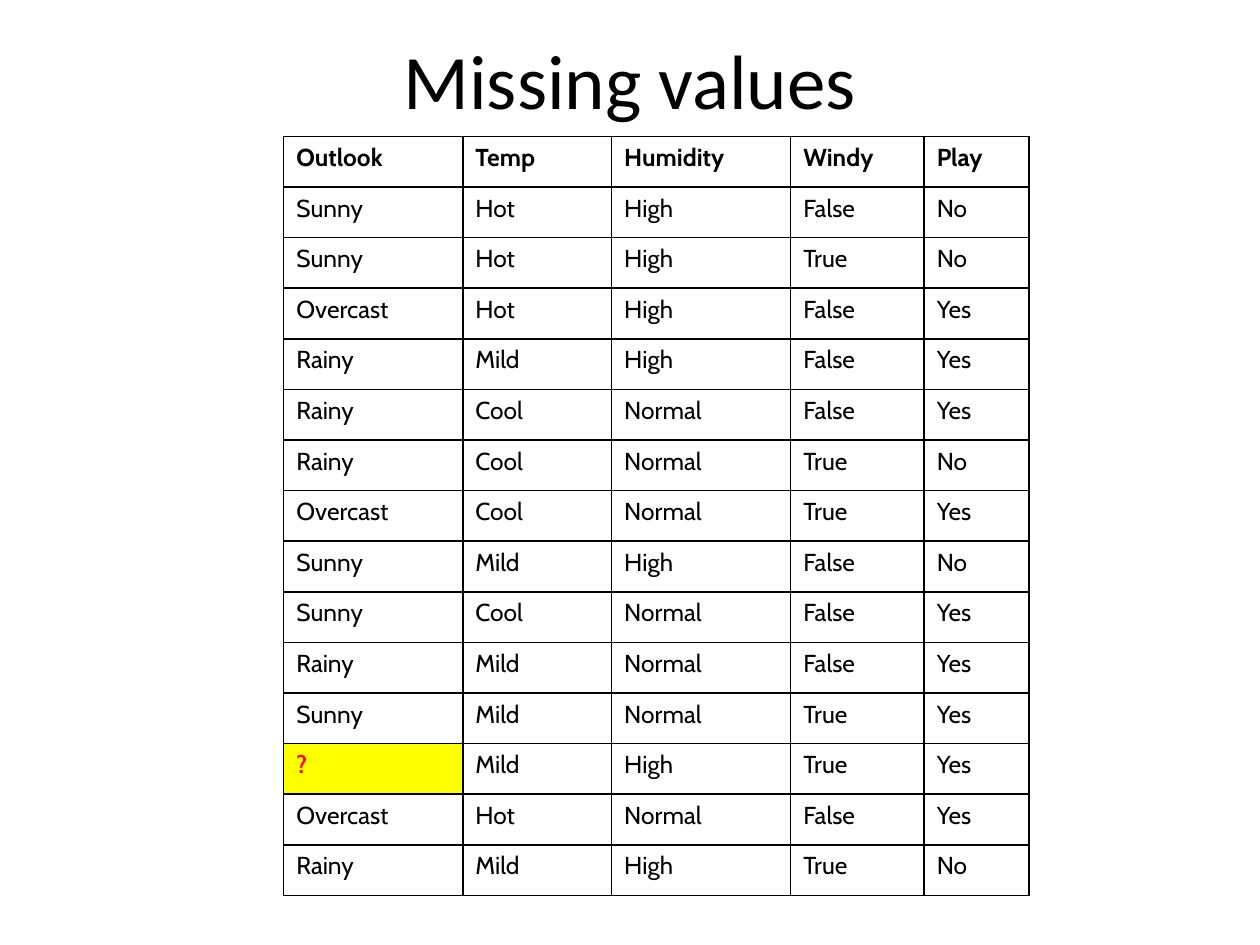
from lxml.etree import SubElement
from pptx import Presentation
from pptx.dml.color import RGBColor
from pptx.enum.text import MSO_ANCHOR, PP_ALIGN
from pptx.oxml import parse_xml
from pptx.oxml.ns import nsdecls, qn
from pptx.util import Cm, Pt

BLACK = RGBColor(0x00, 0x00, 0x00)
RED = RGBColor(0xFF, 0x00, 0x00)
YELLOW = RGBColor(0xFF, 0xFF, 0x00)

# Content
TITLE = "Missing values"
MISSING = "?"
HEADINGS = ("Outlook", "Temp", "Humidity", "Windy", "Play")
DAYS = [
    ("Sunny", "Hot", "High", "False", "No"),
    ("Sunny", "Hot", "High", "True", "No"),
    ("Overcast", "Hot", "High", "False", "Yes"),
    ("Rainy", "Mild", "High", "False", "Yes"),
    ("Rainy", "Cool", "Normal", "False", "Yes"),
    ("Rainy", "Cool", "Normal", "True", "No"),
    ("Overcast", "Cool", "Normal", "True", "Yes"),
    ("Sunny", "Mild", "High", "False", "No"),
    ("Sunny", "Cool", "Normal", "False", "Yes"),
    ("Rainy", "Mild", "Normal", "False", "Yes"),
    ("Sunny", "Mild", "Normal", "True", "Yes"),
    (MISSING, "Mild", "High", "True", "Yes"),
    ("Overcast", "Hot", "Normal", "False", "Yes"),
    ("Rainy", "Mild", "High", "True", "No"),
]
COLUMN_WIDTHS = (3.61, 3.0, 3.61, 2.69, 2.11)
ROW_HEIGHT = 1.02


def add_run(paragraph, text, font_name, size, color, bold=False):
    run = paragraph.add_run()
    run.text = text
    run.font.name = font_name
    run.font.size = Pt(size)
    run.font.bold = bold
    run.font.color.rgb = color


def add_borders(cell):
    properties = cell._tc.get_or_add_tcPr()
    for side in ("lnL", "lnR", "lnT", "lnB"):
        properties.append(parse_xml(
            f'<a:{side} {nsdecls("a")} w="{Pt(1)}"><a:solidFill>'
            f'<a:srgbClr val="{BLACK}"/></a:solidFill></a:{side}>'))


def fill_cell(cell, text, heading):
    missing = text == MISSING
    add_borders(cell)
    if missing:
        cell.fill.solid()
        cell.fill.fore_color.rgb = YELLOW
    else:
        cell.fill.background()
    paragraph = cell.text_frame.paragraphs[0]
    # Space before, as a share of the line height
    space = SubElement(paragraph._p.get_or_add_pPr(), qn("a:spcBef"))
    SubElement(space, qn("a:spcPct")).set("val", "50000")
    add_run(paragraph, text, "Cabin", 14, RED if missing else BLACK,
            bold=heading or missing)


presentation = Presentation()
presentation.slide_width = Cm(25.4)
presentation.slide_height = Cm(19.05)
slide = presentation.slides.add_slide(presentation.slide_layouts[6])

# Title
title = slide.shapes.add_textbox(Cm(1.27), 0, Cm(22.86), Cm(3.18)).text_frame
title.word_wrap = True
title.vertical_anchor = MSO_ANCHOR.MIDDLE
title.paragraphs[0].alignment = PP_ALIGN.CENTER
add_run(title.paragraphs[0], TITLE, "Calibri", 44, BLACK)

# Weather table
rows = [HEADINGS, *DAYS]
weather = slide.shapes.add_table(
    len(rows), len(HEADINGS), Cm(5.72), Cm(2.75),
    Cm(sum(COLUMN_WIDTHS)), Cm(ROW_HEIGHT * len(rows))).table
weather.first_row = True
weather.horz_banding = False
for column, width in zip(weather.columns, COLUMN_WIDTHS):
    column.width = Cm(width)
for row_index, values in enumerate(rows):
    weather.rows[row_index].height = Cm(ROW_HEIGHT)
    for column_index, value in enumerate(values):
        fill_cell(weather.cell(row_index, column_index), value, row_index == 0)

presentation.save("out.pptx")
